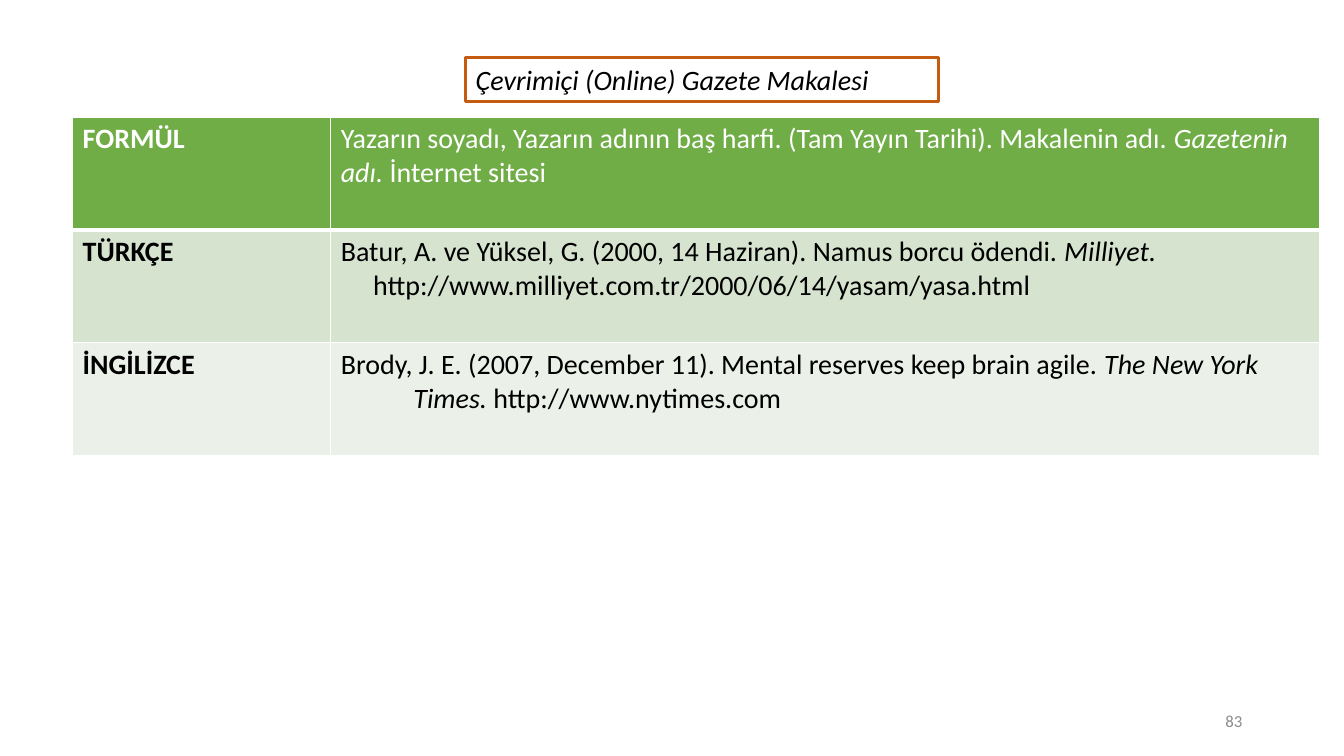
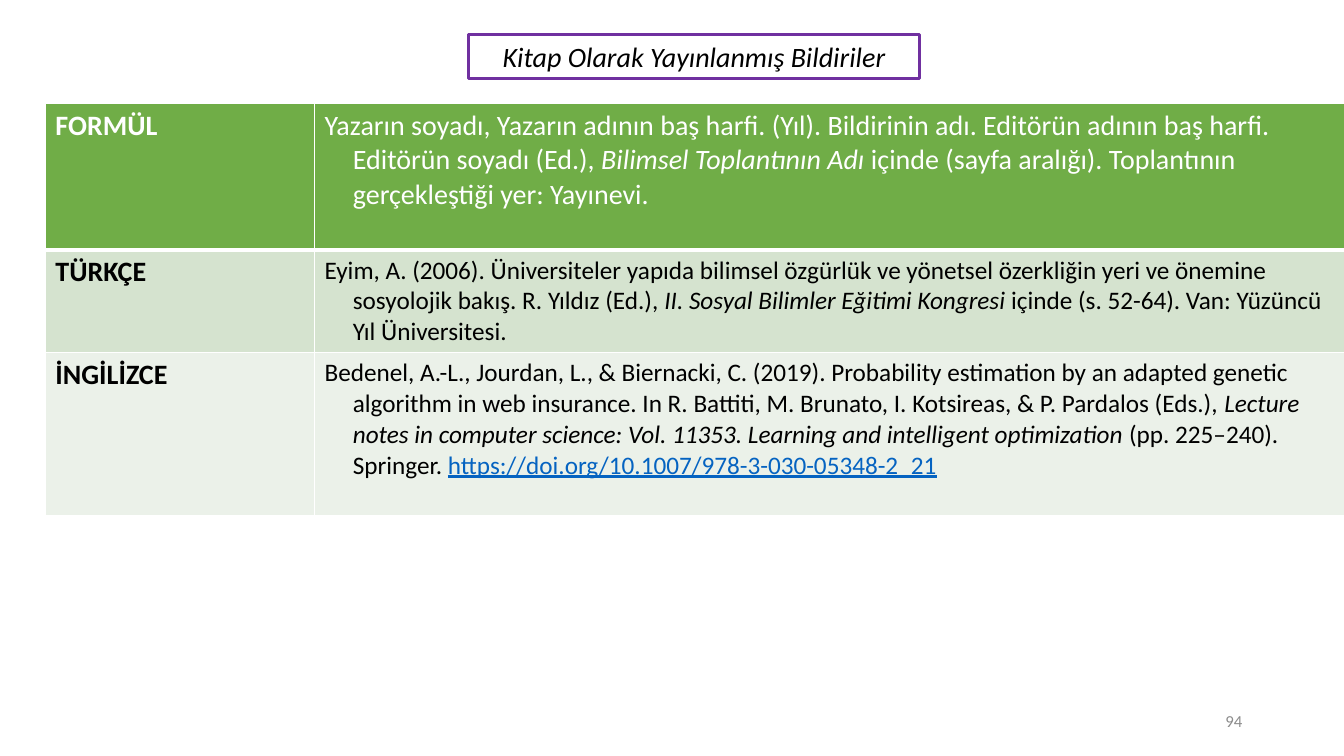
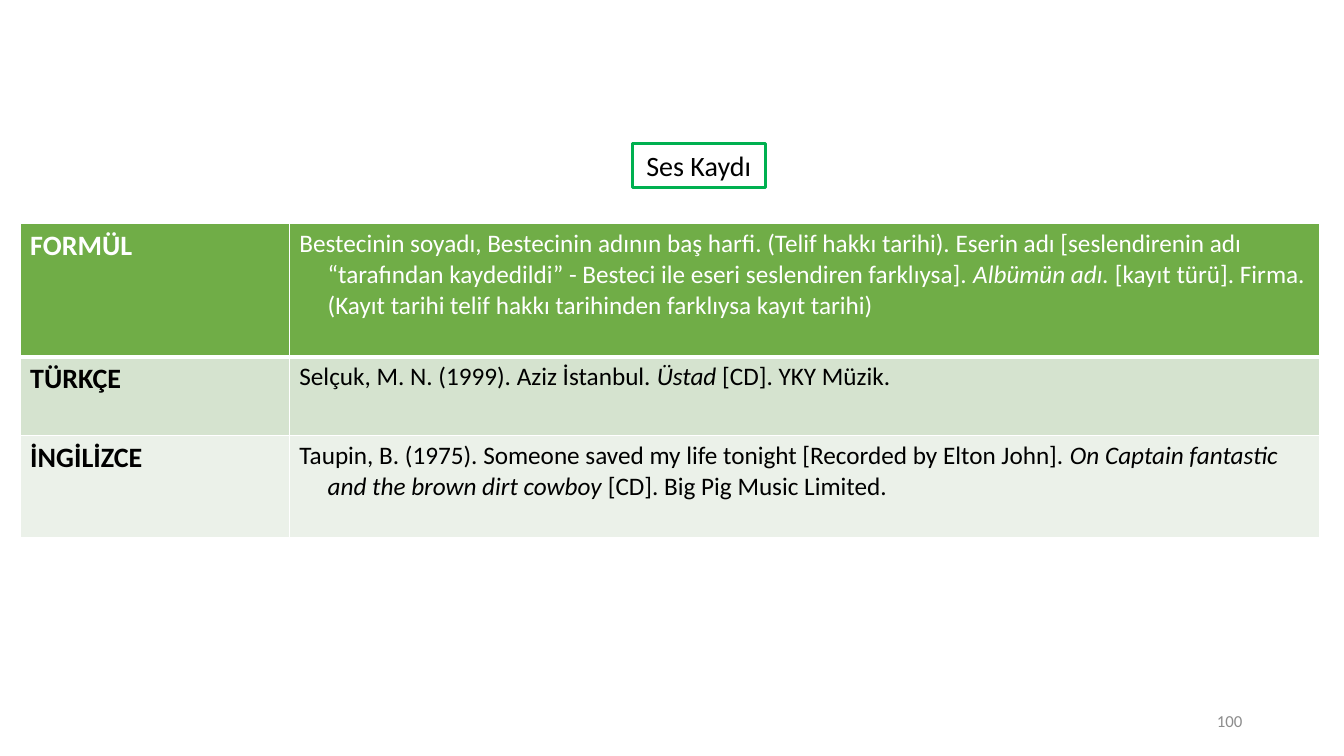
from lxml import etree
from pptx import Presentation
from pptx.dml.color import RGBColor
from pptx.enum.shapes import MSO_SHAPE
from pptx.enum.text import MSO_ANCHOR, PP_ALIGN
from pptx.oxml.ns import qn
from pptx.util import Inches, Pt

RECTANGLE = MSO_SHAPE.RECTANGLE
MIDDLE = MSO_ANCHOR.MIDDLE
LEFT, CENTER, RIGHT = PP_ALIGN.LEFT, PP_ALIGN.CENTER, PP_ALIGN.RIGHT

FONT = "Calibri"
COLORS = {
    "white": "FFFFFF",
    "black": "000000",
    "header": "70AD47",
    "turkish": "D5E3CF",
    "english": "EBF1E9",
    "orange": "C55A11",
    "purple": "7030A0",
    "green": "00B050",
    "link": "0563C1",
    "number": "8C8C8C",
}
ROWS = [
    ("FORMÜL", "header", "white"),
    ("TÜRKÇE", "turkish", "black"),
    ("İNGİLİZCE", "english", "black"),
]


def color(name):
    return RGBColor.from_string(COLORS[name])


class CitationDeck:
    """Builds slides that show citation rules in a three-row table."""

    def __init__(self):
        self.deck = Presentation()
        self.deck.slide_width = Inches(13.33)
        self.deck.slide_height = Inches(7.5)
        self.slide = None

    def add_slide(self, number):
        self.slide = self.deck.slides.add_slide(self.deck.slide_layouts[6])
        box = self.slide.shapes.add_textbox(
            Inches(9.42), Inches(6.95), Inches(3), Inches(0.4))
        frame = box.text_frame
        frame.word_wrap = True
        frame.vertical_anchor = MIDDLE
        frame.text = str(number)
        para = frame.paragraphs[0]
        para.alignment = RIGHT
        self.style(para.runs[0].font, 12, "number")

    def style(self, font, size, color_name, bold=False, italic=False):
        font.name = FONT
        font.size = Pt(size)
        font.bold = bold
        font.italic = italic
        font.color.rgb = color(color_name)

    def heading(self, text, left, top, width, line, align=CENTER, italic=True):
        box = self.slide.shapes.add_shape(
            RECTANGLE, Inches(left), Inches(top), Inches(width), Inches(0.44))
        box.shadow.inherit = False
        box.fill.solid()
        box.fill.fore_color.rgb = color("white")
        box.line.color.rgb = color(line)
        box.line.width = Pt(2.25)
        frame = box.text_frame
        frame.word_wrap = True
        frame.text = text
        para = frame.paragraphs[0]
        para.alignment = align
        self.style(para.runs[0].font, 20, "black", italic=italic)

    def table(self, left, top, columns, heights, references):
        frame = self.slide.shapes.add_table(
            len(ROWS), len(columns), Inches(left), Inches(top),
            Inches(sum(columns)), Inches(sum(heights)))
        table = frame.table
        for column, width in zip(table.columns, columns):
            column.width = Inches(width)
        for index, (label, fill, ink) in enumerate(ROWS):
            size, hang, spans = references[index]
            table.rows[index].height = Inches(heights[index])
            name_cell, reference_cell = table.cell(index, 0), table.cell(index, 1)
            name_cell.text_frame.text = label
            self.style(name_cell.text_frame.paragraphs[0].runs[0].font, 20, ink, bold=True)
            self.reference(reference_cell.text_frame.paragraphs[0], size, hang, spans, ink)
            for cell in (name_cell, reference_cell):
                self.borders(cell, top=3 if index == 1 else 1, bottom=3 if index == 0 else 1)
                cell.fill.solid()
                cell.fill.fore_color.rgb = color(fill)

    def reference(self, para, size, hang, spans, ink):
        properties = para._p.get_or_add_pPr()
        properties.set("marL", str(Inches(hang)))
        properties.set("indent", str(-Inches(hang)))
        for text, kind in spans:
            if kind == "break":
                para.add_line_break()
                continue
            span = para.add_run()
            span.text = text
            self.style(span.font, size, "link" if kind == "link" else ink,
                       italic=kind == "italic")
            span.font.underline = kind == "link"

    def borders(self, cell, top, bottom):
        properties = cell._tc.get_or_add_tcPr()
        for side, width in (("L", 1), ("R", 1), ("T", top), ("B", bottom)):
            line = etree.SubElement(properties, qn(f"a:ln{side}"), w=str(Pt(width)))
            fill = etree.SubElement(line, qn("a:solidFill"))
            etree.SubElement(fill, qn("a:srgbClr"), val=COLORS["white"])


def newspaper(book):
    book.add_slide(83)
    book.table(0.72, 1.16, [2.56, 9.81], [1.12] * 3, [
        (20, 0, [
            ("Yazarın soyadı, Yazarın adının baş harfi. (Tam Yayın Tarihi). Makalenin adı. ", "plain"),
            ("Gazetenin adı. ", "italic"),
            ("İnternet sitesi", "plain")]),
        (20, 0.32, [
            ("Batur, A. ve Yüksel, G. (2000, 14 Haziran). Namus borcu ödendi. ", "plain"),
            ("Milliyet.", "italic"),
            ("", "break"),
            ("http://www.milliyet.com.tr/2000/06/14/yasam/yasa.html", "plain")]),
        (20, 0.72, [
            ("Brody, J. E. (2007, December 11). Mental reserves keep brain agile. ", "plain"),
            ("The New York Times. ", "italic"),
            ("http://www.nytimes.com", "plain")]),
    ])
    book.heading("Çevrimiçi (Online) Gazete Makalesi", 4.62, 0.57, 4.69, "orange", align=LEFT)


def proceedings(book):
    book.add_slide(94)
    book.table(0.45, 1.03, [2.67, 10.22], [1.45, 1.02, 1.62], [
        (20, 0.28, [
            ("Yazarın soyadı, Yazarın adının baş harfi. (Yıl). Bildirinin adı. "
             "Editörün adının baş harfi. Editörün soyadı (Ed.), ", "plain"),
            ("Bilimsel Toplantının Adı ", "italic"),
            ("içinde (sayfa aralığı). Toplantının gerçekleştiği yer: Yayınevi.", "plain")]),
        (18, 0.28, [
            ("Eyim, A. (2006). Üniversiteler yapıda bilimsel özgürlük ve yönetsel özerkliğin "
             "yeri ve önemine sosyolojik bakış. R. Yıldız (Ed.), ", "plain"),
            ("II. Sosyal Bilimler Eğitimi Kongresi ", "italic"),
            ("içinde (s. 52-64). Van: Yüzüncü Yıl Üniversitesi.", "plain")]),
        (18, 0.28, [
            ("Bedenel, A.-L., Jourdan, L., & Biernacki, C. (2019). Probability estimation by an "
             "adapted genetic algorithm in web insurance. In R. Battiti, M. Brunato, "
             "I. Kotsireas, & P. Pardalos (Eds.), ", "plain"),
            ("Lecture notes in computer science: Vol. 11353. "
             "Learning and intelligent optimization", "italic"),
            (" (pp. 225–240). Springer. ", "plain"),
            ("https://doi.org/10.1007/978-3-030-05348-2_21", "link")]),
    ])
    book.heading("Kitap Olarak Yayınlanmış Bildiriler", 4.65, 0.34, 4.47, "purple")


def recording(book):
    book.add_slide(100)
    book.table(0.2, 2.22, [2.67, 10.22], [1.32, 0.78, 1.01], [
        (18, 0.28, [
            ("Bestecinin soyadı, Bestecinin adının baş harfi. (Telif hakkı tarihi). Eserin adı "
             "[seslendirenin adı “tarafından kaydedildi” - Besteci ile eseri seslendiren "
             "farklıysa]. ", "plain"),
            ("Albümün adı. ", "italic"),
            ("[kayıt türü]. Firma.(Kayıt tarihi telif hakkı tarihinden farklıysa "
             "kayıt tarihi)", "plain")]),
        (18, 0.28, [
            ("Selçuk, M. N. (1999). Aziz İstanbul. ", "plain"),
            ("Üstad ", "italic"),
            ("[CD]. YKY Müzik.", "plain")]),
        (18, 0.28, [
            ("Taupin, B. (1975). Someone saved my life tonight [Recorded by Elton John]. ", "plain"),
            ("On Captain fantastic and the brown dirt cowboy ", "italic"),
            ("[CD]. Big Pig Music Limited.", "plain")]),
    ])
    book.heading("Ses Kaydı", 6.27, 1.42, 1.32, "green", italic=False)


def main():
    book = CitationDeck()
    for build in (newspaper, proceedings, recording):
        build(book)
    book.deck.save("out.pptx")


if __name__ == "__main__":
    main()
